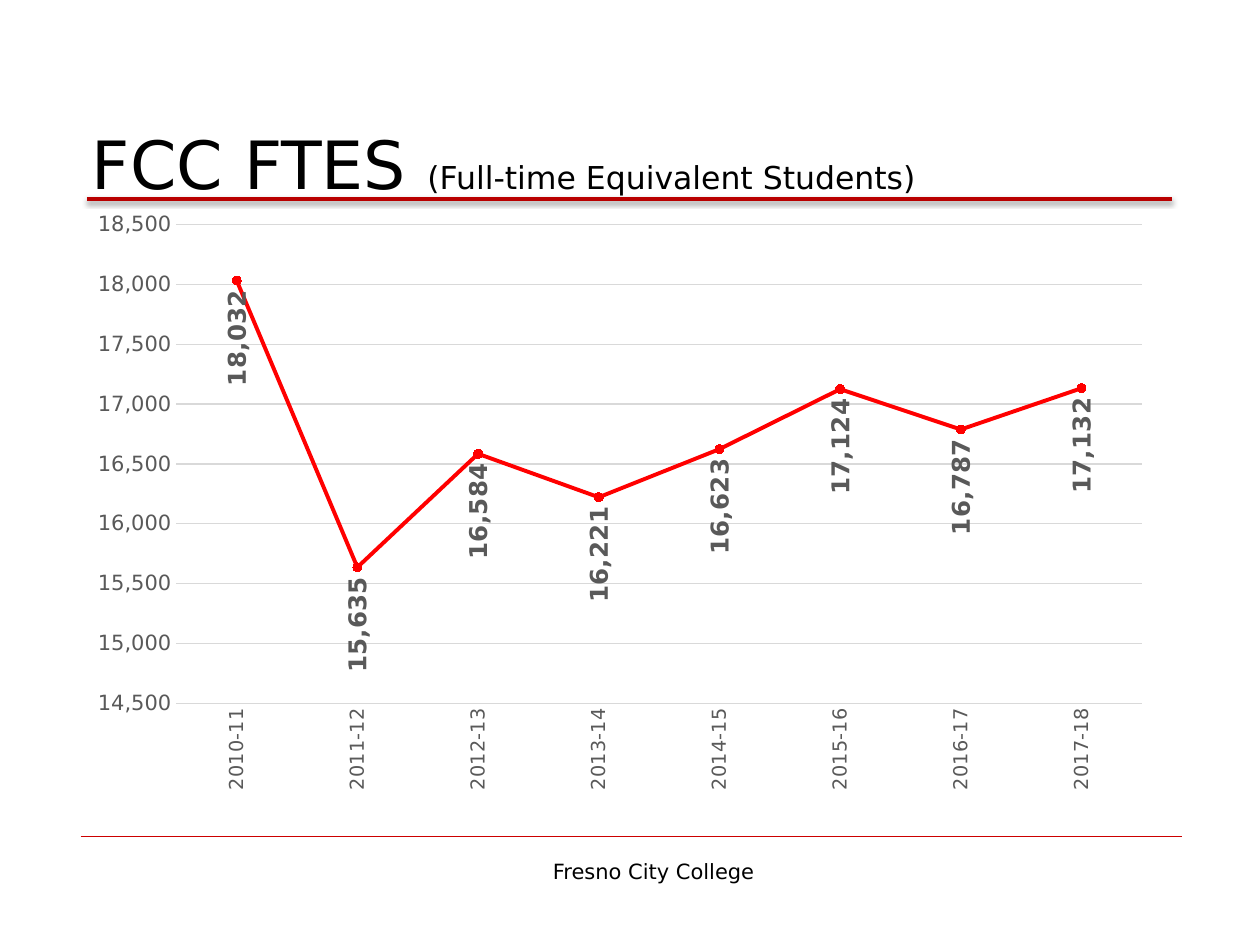
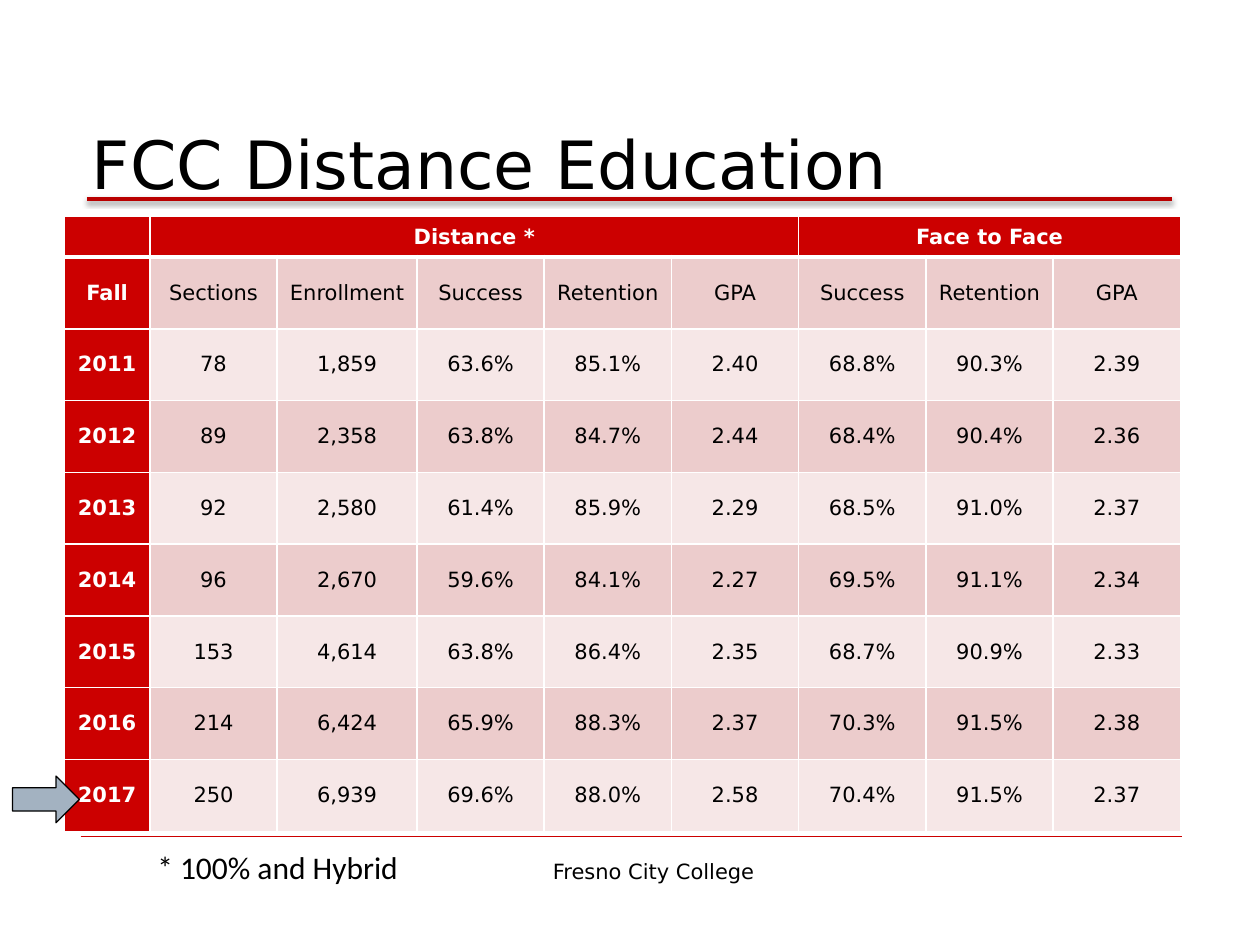
from lxml import etree
from pptx import Presentation
from pptx import util as u
from pptx.chart.data import CategoryChartData
from pptx.dml.color import RGBColor
from pptx.enum import chart as charts, shapes, text
from pptx.oxml import parse_xml
from pptx.oxml.ns import nsdecls, qn

# Content
FOOTER = "Fresno City College"
FTES_TITLE = [("FCC FTES ", 38), ("(Full-time Equivalent Students)", 18)]
DISTANCE_TITLE = [("FCC Distance Education", 38)]
FOOTNOTE = "* 100% and Hybrid"
FTES = {
    "2010-11": 18032, "2011-12": 15635, "2012-13": 16584, "2013-14": 16221,
    "2014-15": 16623, "2015-16": 17124, "2016-17": 16787, "2017-18": 17132,
}
GROUPS = [("Distance *", 1, 5), ("Face to Face", 6, 8)]  # label, first and last column
ROWS = [
    ("Fall", "Sections", "Enrollment", "Success", "Retention", "GPA", "Success", "Retention", "GPA"),
    ("2011", "78", "1,859", "63.6%", "85.1%", "2.40", "68.8%", "90.3%", "2.39"),
    ("2012", "89", "2,358", "63.8%", "84.7%", "2.44", "68.4%", "90.4%", "2.36"),
    ("2013", "92", "2,580", "61.4%", "85.9%", "2.29", "68.5%", "91.0%", "2.37"),
    ("2014", "96", "2,670", "59.6%", "84.1%", "2.27", "69.5%", "91.1%", "2.34"),
    ("2015", "153", "4,614", "63.8%", "86.4%", "2.35", "68.7%", "90.9%", "2.33"),
    ("2016", "214", "6,424", "65.9%", "88.3%", "2.37", "70.3%", "91.5%", "2.38"),
    ("2017", "250", "6,939", "69.6%", "88.0%", "2.58", "70.4%", "91.5%", "2.37"),
]

# Shared style
BLACK = RGBColor(0x00, 0x00, 0x00)
WHITE = RGBColor(0xFF, 0xFF, 0xFF)
RED = RGBColor(0xCC, 0x00, 0x00)
TITLE_RED = RGBColor(0xB9, 0x00, 0x00)
SERIES_RED = RGBColor(0xFF, 0x00, 0x00)
BANDS = (RGBColor(0xEC, 0xCC, 0xCC), RGBColor(0xF6, 0xE7, 0xE7))
GREY = RGBColor(0x59, 0x59, 0x59)
GRID_GREY = RGBColor(0xD9, 0xD9, 0xD9)
ARROW_BLUE = RGBColor(0xA3, 0xB2, 0xC1)
FONT = "DejaVu Sans"
NOTE_FONT = "Calibri"

# Grid, in inches
LEFT = 0.63
COLUMNS = [0.68, 1.01, 1.11] + [1.01] * 6
HEAD_ROW, BODY_ROW = 0.32, 0.57
TABLE_LEFT, TABLE_TOP = 0.51, 1.72

TITLE_SHADOW = (
    '<a:outerShdw blurRad="39370" dist="20320" dir="5400000" rotWithShape="0">'
    '<a:srgbClr val="000000"><a:alpha val="38000"/></a:srgbClr></a:outerShdw>'
)


def inches(*lengths):
    return [u.Inches(length) for length in lengths]


def style_font(font, size, color=BLACK, bold=False, name=FONT):
    font.name, font.size, font.bold = name, u.Pt(size), bold
    font.color.rgb = color


def add_text(page, place, spans, anchor, name=FONT, wrap=True):
    frame = page.shapes.add_textbox(*inches(*place)).text_frame
    frame.word_wrap = wrap
    frame.vertical_anchor = anchor
    for words, size in spans:
        span = frame.paragraphs[0].add_run()
        span.text = words
        style_font(span.font, size, name=name)


def add_rule(page, left, right, y, color, width, effect=""):
    rule = page.shapes.add_connector(shapes.MSO_CONNECTOR.STRAIGHT, *inches(left, y, right, y))
    rule.line.color.rgb = color
    rule.line.width = u.Pt(width)
    rule._element.spPr.append(
        parse_xml(f"<a:effectLst {nsdecls('a')}>{effect}</a:effectLst>"))


def add_page(deck, title):
    page = deck.slides.add_slide(deck.slide_layouts[6])
    add_text(page, (4.29, 6.74, 1.84, 0.32), [(FOOTER, 12)], text.MSO_ANCHOR.BOTTOM, wrap=False)
    add_rule(page, 0.64, 9.38, 6.64, RED, 0.75)
    add_rule(page, 0.69, 9.3, 1.58, TITLE_RED, 2, TITLE_SHADOW)
    add_text(page, (LEFT, 0.33, 8.75, 1.33), title, text.MSO_ANCHOR.BOTTOM)
    return page


# Line chart
def turn_upright(part):
    body = part._element.find(f"{qn('c:txPr')}/{qn('a:bodyPr')}")
    body.set("rot", "-5400000")
    body.set("vert", "horz")


def set_plot_area(chart, x, y, w, h):
    area = chart._chartSpace.chart.plotArea
    for old in area.findall(qn("c:layout")):
        area.remove(old)
    layout = etree.Element(qn("c:layout"))
    manual = etree.SubElement(layout, qn("c:manualLayout"))
    settings = {"layoutTarget": "inner", "xMode": "edge", "yMode": "edge",
                "x": x, "y": y, "w": w, "h": h}
    for key, value in settings.items():
        etree.SubElement(manual, qn(f"c:{key}")).set("val", str(value))
    area.insert(0, layout)


def add_ftes_chart(page):
    data = CategoryChartData(number_format="#,##0")
    data.categories = list(FTES)
    data.add_series("Series 1", list(FTES.values()))
    chart = page.shapes.add_chart(
        charts.XL_CHART_TYPE.LINE_MARKERS, *inches(LEFT, 1.66, 8.65, 4.89), data).chart
    chart.has_title = chart.has_legend = False
    style_font(chart.font, 10)
    set_plot_area(chart, 0.089, 0.025, 0.886, 0.777)

    years, counts = chart.category_axis, chart.value_axis
    for axis, size in ((years, 11), (counts, 12)):
        axis.major_tick_mark = axis.minor_tick_mark = charts.XL_TICK_MARK.NONE
        style_font(axis.tick_labels.font, size, GREY)
    turn_upright(years)
    counts.minimum_scale, counts.maximum_scale, counts.major_unit = 14500, 18500, 500
    counts.tick_labels.number_format = "#,##0"
    counts.tick_labels.number_format_is_linked = False
    counts.format.line.fill.background()
    for line in (years.format.line, counts.major_gridlines.format.line):
        line.color.rgb = GRID_GREY
        line.width = u.Pt(0.75)

    plot = chart.plots[0]
    plot.vary_by_categories = False
    series = plot.series[0]
    series.smooth = False
    series.format.line.color.rgb = SERIES_RED
    series.format.line.width = u.Pt(2.25)
    marker = series.marker
    marker.style, marker.size = charts.XL_MARKER_STYLE.CIRCLE, 5
    marker.format.fill.solid()
    marker.format.fill.fore_color.rgb = SERIES_RED
    marker.format.line.color.rgb = SERIES_RED

    labels = series.data_labels
    labels.show_value = True
    labels.position = charts.XL_LABEL_POSITION.BELOW
    labels.number_format = "#,##0"
    labels.number_format_is_linked = False
    style_font(labels.font, 14, GREY, True)
    turn_upright(labels)


# Table
def style_cell(cell, fill, bottom=1):
    cell.margin_left = cell.margin_right = u.Inches(0.07)
    cell.margin_top = cell.margin_bottom = 0
    cell.vertical_anchor = text.MSO_ANCHOR.MIDDLE
    properties = cell._tc.get_or_add_tcPr()
    for side, width in (("L", 1), ("R", 1), ("T", 1), ("B", bottom)):
        properties.append(parse_xml(
            f'<a:ln{side} {nsdecls("a")} w="{u.Pt(width)}"><a:solidFill>'
            f'<a:srgbClr val="{WHITE}"/></a:solidFill></a:ln{side}>'))
    cell.fill.solid()
    cell.fill.fore_color.rgb = fill


def write_cell(cell, words, heading):
    cell.text_frame.text = words
    para = cell.text_frame.paragraphs[0]
    para.alignment = text.PP_ALIGN.CENTER
    style_font(para.runs[0].font, 12, WHITE if heading else BLACK, heading)


def add_distance_table(page):
    height = HEAD_ROW + BODY_ROW * len(ROWS)
    table = page.shapes.add_table(
        len(ROWS) + 1, len(COLUMNS),
        *inches(TABLE_LEFT, TABLE_TOP, sum(COLUMNS), height)).table
    table.first_row = table.horz_banding = False
    for column, width in zip(table.columns, COLUMNS):
        column.width = u.Inches(width)
    for i, row in enumerate(table.rows):
        row.height = u.Inches(BODY_ROW if i else HEAD_ROW)

    for c in range(len(COLUMNS)):
        style_cell(table.cell(0, c), RED, bottom=3)
    for label, first, last in GROUPS:
        table.cell(0, first).merge(table.cell(0, last))
        write_cell(table.cell(0, first), label, True)
    for r, values in enumerate(ROWS):
        for c, words in enumerate(values):
            cell = table.cell(r + 1, c)
            style_cell(cell, BANDS[r % 2] if c else RED)
            write_cell(cell, words, c == 0)


def add_year_arrow(page):
    arrow = page.shapes.add_shape(
        shapes.MSO_SHAPE.RIGHT_ARROW, *inches(0.1, 6.16, 0.53, 0.37))
    arrow.shadow.inherit = False
    arrow.fill.solid()
    arrow.fill.fore_color.rgb = ARROW_BLUE
    arrow.line.color.rgb = BLACK
    arrow.line.width = u.Pt(0.75)


def main():
    deck = Presentation()
    deck.slide_width, deck.slide_height = inches(10, 7.5)

    add_ftes_chart(add_page(deck, FTES_TITLE))

    page = add_page(deck, DISTANCE_TITLE)
    add_text(page, (1.15, 6.68, 2.14, 0.4), [(FOOTNOTE, 18)],
             text.MSO_ANCHOR.TOP, NOTE_FONT, wrap=False)
    add_distance_table(page)
    add_year_arrow(page)

    deck.save("out.pptx")


if __name__ == "__main__":
    main()
